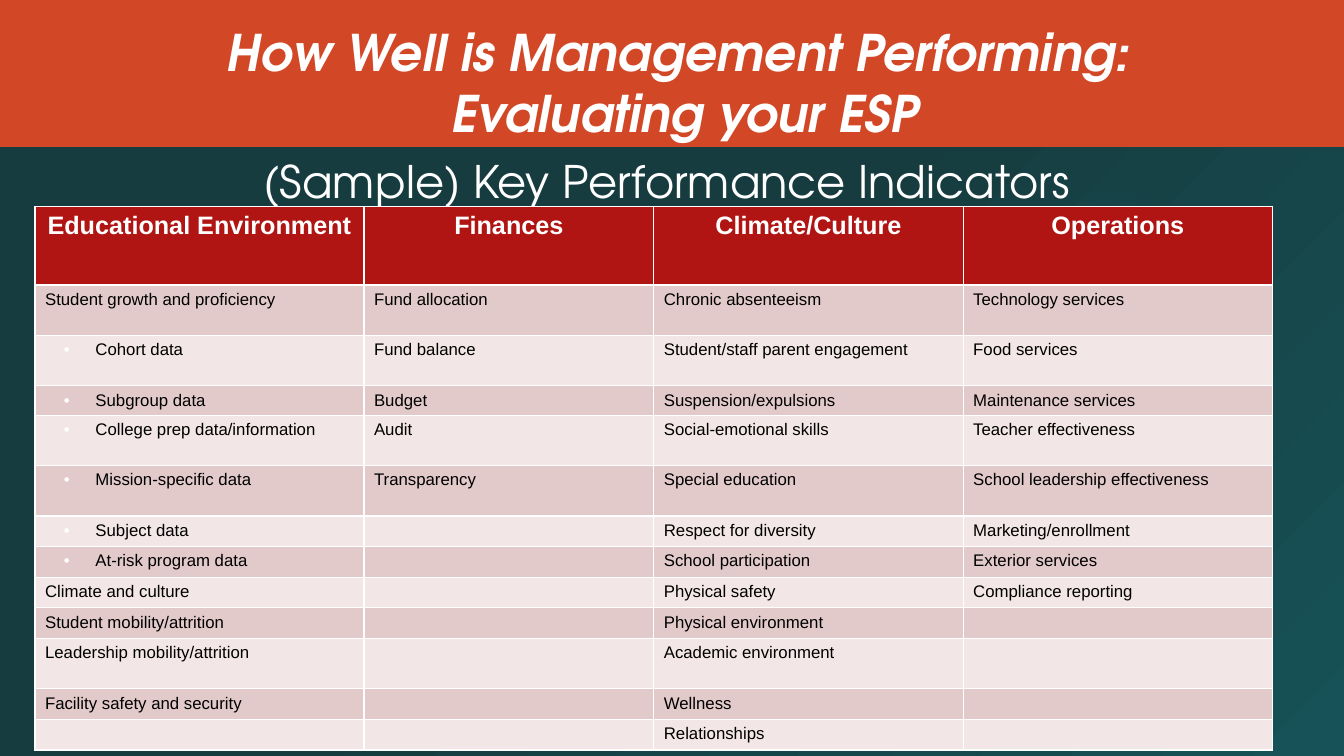
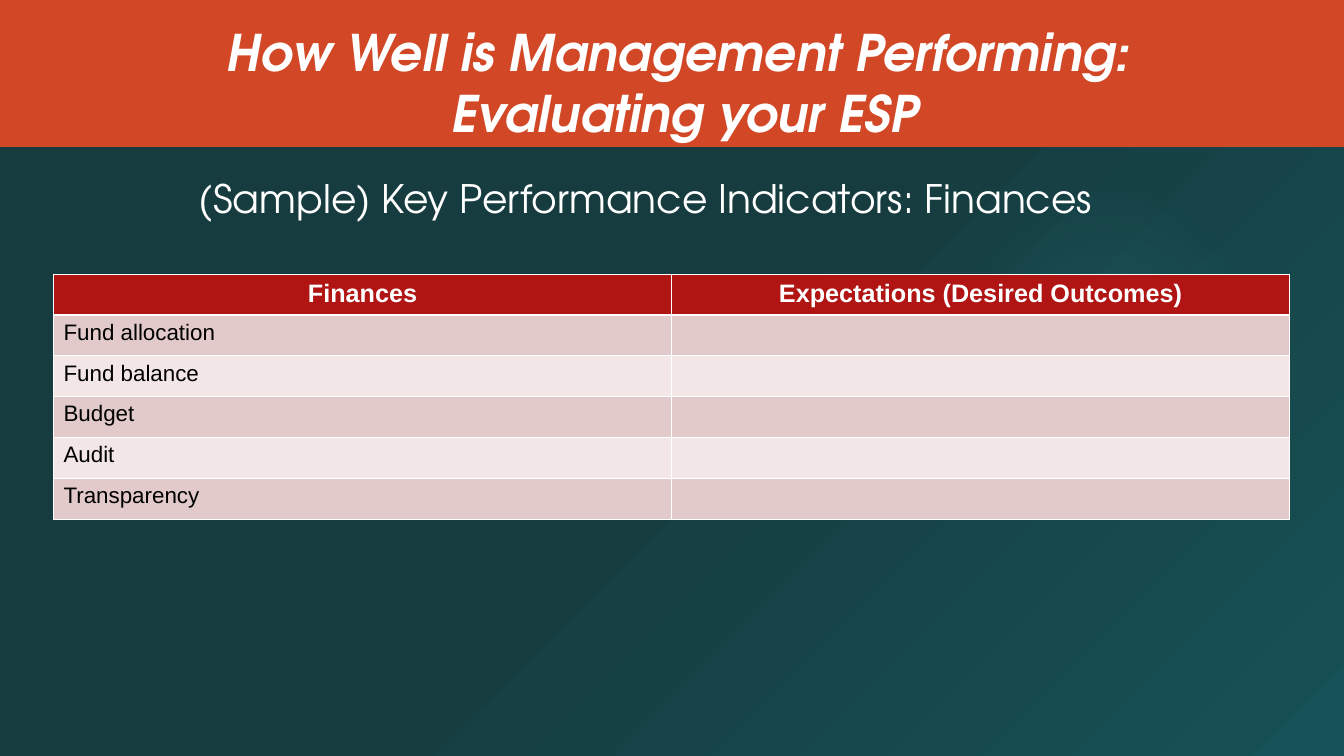
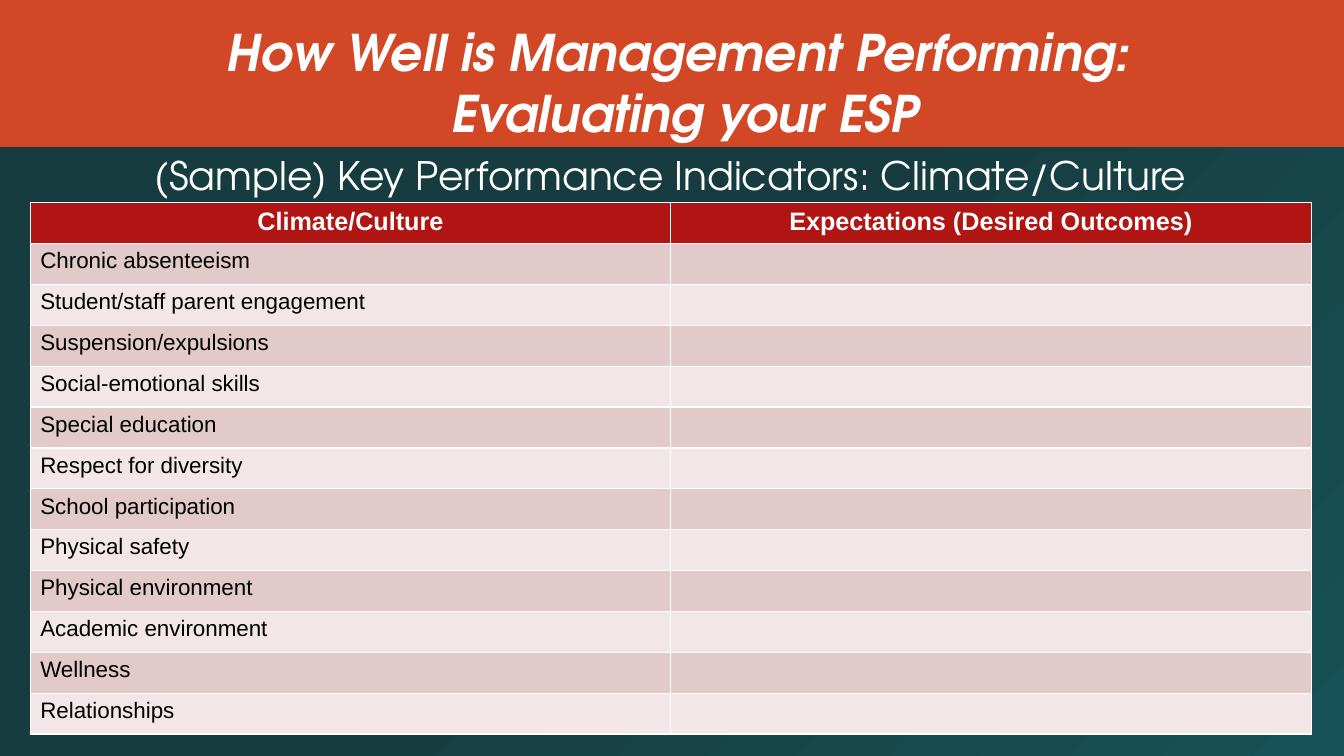
"""Build three slides of sample key performance indicators."""
from itertools import zip_longest

from lxml import etree
from pptx import Presentation
from pptx.dml.color import RGBColor
from pptx.enum.shapes import MSO_SHAPE
from pptx.enum.text import MSO_ANCHOR, MSO_AUTO_SIZE, PP_ALIGN
from pptx.oxml.ns import qn
from pptx.util import Pt

RECT, OVAL = MSO_SHAPE.RECTANGLE, MSO_SHAPE.OVAL
TOP, MIDDLE = MSO_ANCHOR.TOP, MSO_ANCHOR.MIDDLE
CENTER, LEFT = PP_ALIGN.CENTER, PP_ALIGN.LEFT
FIXED = MSO_AUTO_SIZE.NONE

WHITE = RGBColor(0xFF, 0xFF, 0xFF)
BLACK = RGBColor(0x00, 0x00, 0x00)
RED = RGBColor(0xB0, 0x15, 0x13)
ORANGE = RGBColor(0xD2, 0x47, 0x26)
ROSE = RGBColor(0xE3, 0xCA, 0xCA)
PALE = RGBColor(0xF2, 0xE7, 0xE6)
DARK = RGBColor(0x16, 0x3C, 0x3F)
TEAL = RGBColor(0x16, 0x52, 0x57)
GLOW = RGBColor(0x4C, 0xB9, 0xC3)

HEAD, BODY = "TeX Gyre Adventor", "Arial"
WIDE, HIGH = 960, 540
BAND = 105

TITLE = ("How Well is Management Performing: ", "Evaluating your ESP")
LEAD = "(Sample) Key Performance Indicators"
GOALS = "Expectations (Desired Outcomes)"

SUBS = ["Cohort data", "Subgroup data", "College prep data/information",
        "Mission-specific data", "Subject data", "At-risk program data"]
SCHOOL = ["Student growth and proficiency", *SUBS, "Climate and culture",
          "Student mobility/attrition", "Leadership mobility/attrition",
          "Facility safety and security"]
MONEY = ["Fund allocation", "Fund balance", "Budget", "Audit", "Transparency"]
CLIMATE = ["Chronic absenteeism", "Student/staff parent engagement",
           "Suspension/expulsions", "Social-emotional skills",
           "Special education", "Respect for diversity",
           "School participation", "Physical safety", "Physical environment",
           "Academic environment", "Wellness", "Relationships"]
WORK = ["Technology services", "Food services", "Maintenance services",
        "Teacher effectiveness", "School leadership effectiveness",
        "Marketing/enrollment", "Exterior services", "Compliance reporting"]

TALL, LOW, EVEN = 36, 21, 29.2
PAGES = [
    {"lead": LEAD, "size": 32, "box": (104.5, 106, 744, 46),
     "cols": {"Educational Environment": SCHOOL, "Finances": MONEY,
              "Climate/Culture": CLIMATE, "Operations": WORK},
     "at": (25, 147.6), "widths": [235, 207, 221, 221], "text": 12,
     "rows": [56, TALL, TALL, LOW, TALL, TALL, LOW, LOW, LOW, LOW, TALL,
              LOW, LOW]},
    {"lead": LEAD + ": Finances", "size": 28, "box": (38, 121, 846, 75),
     "cols": {"Finances": MONEY, GOALS: []},
     "at": (38.2, 195.8), "widths": [441.5] * 2, "text": 16,
     "rows": [EVEN] * (len(MONEY) + 1)},
    {"lead": LEAD + ": Climate/Culture", "size": 28,
     "box": (98.5, 104.5, 761, 75),
     "cols": {"Climate/Culture": CLIMATE, GOALS: []},
     "at": (21.6, 144.8), "widths": [457.5] * 2, "text": 16,
     "rows": [EVEN] * (len(CLIMATE) + 1)},
]


def place(shape, box):
    """Set a shape's left, top, width and height."""
    shape.left, shape.top, shape.width, shape.height = map(Pt, box)


def say(para, text, face, size, color, bold=False, italic=False):
    """Add one formatted run."""
    run = para.add_run()
    run.text = text
    font = run.font
    font.name, font.size, font.bold, font.italic = face, Pt(size), bold, italic
    font.color.rgb = color


def blend(fill, root, stops, focus):
    """Give a fill a circular gradient of (position, colour, alpha) stops."""
    fill.background()
    old = root.find(".//" + qn("a:noFill"))
    grad = etree.Element(qn("a:gradFill"), rotWithShape="1")
    group = etree.SubElement(grad, qn("a:gsLst"))
    for pos, color, alpha in stops:
        stop = etree.SubElement(group, qn("a:gs"), pos=str(pos * 1000))
        tint = etree.SubElement(stop, qn("a:srgbClr"), val=str(color))
        if alpha < 100:
            etree.SubElement(tint, qn("a:alpha"), val=str(alpha * 1000))
    way = etree.SubElement(grad, qn("a:path"))
    way.set("path", "circle")
    etree.SubElement(way, qn("a:fillToRect"),
                     {side: str(part * 1000) for side, part in zip("ltrb", focus)})
    old.getparent().replace(old, grad)


def dress(master, layout, slide):
    """Put the background, glow, band and title place on the master."""
    blend(master.background.fill, master.element,
          [(0, DARK, 100), (48, DARK, 100), (100, TEAL, 100)], (0, 0, 100, 100))
    glow = slide.shapes.add_shape(OVAL, Pt(677.5), Pt(132), Pt(222), Pt(222))
    blend(glow.fill, glow.element,
          [(0, GLOW, 7), (36, GLOW, 6), (69, GLOW, 0), (100, GLOW, 0)], (50,) * 4)
    band = slide.shapes.add_shape(RECT, 0, 0, Pt(WIDE), Pt(BAND))
    band.fill.solid()
    band.fill.fore_color.rgb = ORANGE
    tree = master.element.cSld.spTree
    for step, shape in enumerate((glow, band)):
        shape.line.fill.background()
        shape.shadow.inherit = False
        shape.element.nvSpPr.cNvPr.id = 100 + step
        tree.insert(2 + step, shape.element)
    place(layout.placeholders[0], (119, 11.5, 741, 94))


def frame(shape, anchor):
    """Prepare a placeholder and return its first paragraph."""
    text = shape.text_frame
    text.word_wrap, text.auto_size = True, FIXED
    text.vertical_anchor = anchor
    para = text.paragraphs[0]
    para.alignment, para.space_before = CENTER, Pt(0)
    return para


def bullet(para):
    """Indent a paragraph behind a white bullet."""
    props = para._p.get_or_add_pPr()
    props.set("marL", str(Pt(36)))
    props.set("indent", str(Pt(-22.5)))
    tint = etree.SubElement(props, qn("a:buClr"))
    etree.SubElement(tint, qn("a:srgbClr"), val=str(WHITE))
    etree.SubElement(props, qn("a:buFont"), typeface=BODY)
    etree.SubElement(props, qn("a:buChar"), char="•")


def grid(slide, page):
    """Draw the page's table."""
    cols, widths, highs = page["cols"], page["widths"], page["rows"]
    lines = [tuple(cols), *zip_longest(*cols.values(), fillvalue="")]
    box = (*page["at"], sum(widths), sum(highs))
    table = slide.shapes.add_table(len(lines), len(cols), *map(Pt, box)).table
    for col, width in zip(table.columns, widths):
        col.width = Pt(width)
    for row, high in zip(table.rows, highs):
        row.height = Pt(high)
    for r, line in enumerate(lines):
        for c, text in enumerate(line):
            cell = table.cell(r, c)
            cell.fill.solid()
            cell.fill.fore_color.rgb = (ROSE if r % 2 else PALE) if r else RED
            para = cell.text_frame.paragraphs[0]
            para.alignment = LEFT if r else CENTER
            if text in SUBS:
                bullet(para)
            if not text:
                etree.SubElement(para._p, qn("a:endParaRPr"),
                                 sz=str(page["text"] * 100))
            elif r:
                say(para, text, BODY, page["text"], BLACK)
            else:
                say(para, text, BODY, 18, WHITE, bold=True)


def main():
    """Build and save the slides."""
    prs = Presentation()
    prs.slide_width, prs.slide_height = Pt(WIDE), Pt(HIGH)
    layout = prs.slide_layouts[1]
    for page in PAGES:
        slide = prs.slides.add_slide(layout)
        if page is PAGES[0]:
            dress(prs.slide_master, layout, slide)
        para = frame(slide.shapes.title, MIDDLE)
        for i, part in enumerate(TITLE):
            if i:
                para.add_line_break()
            say(para, part, HEAD, 36, WHITE, bold=True, italic=True)
        lead = slide.placeholders[1]
        place(lead, page["box"])
        para = frame(lead, TOP)
        props = para._p.get_or_add_pPr()
        props.set("marL", "0")
        props.set("indent", "0")
        etree.SubElement(props, qn("a:buNone"))
        say(para, page["lead"], HEAD, page["size"], WHITE)
        grid(slide, page)
    prs.save("out.pptx")


if __name__ == "__main__":
    main()
